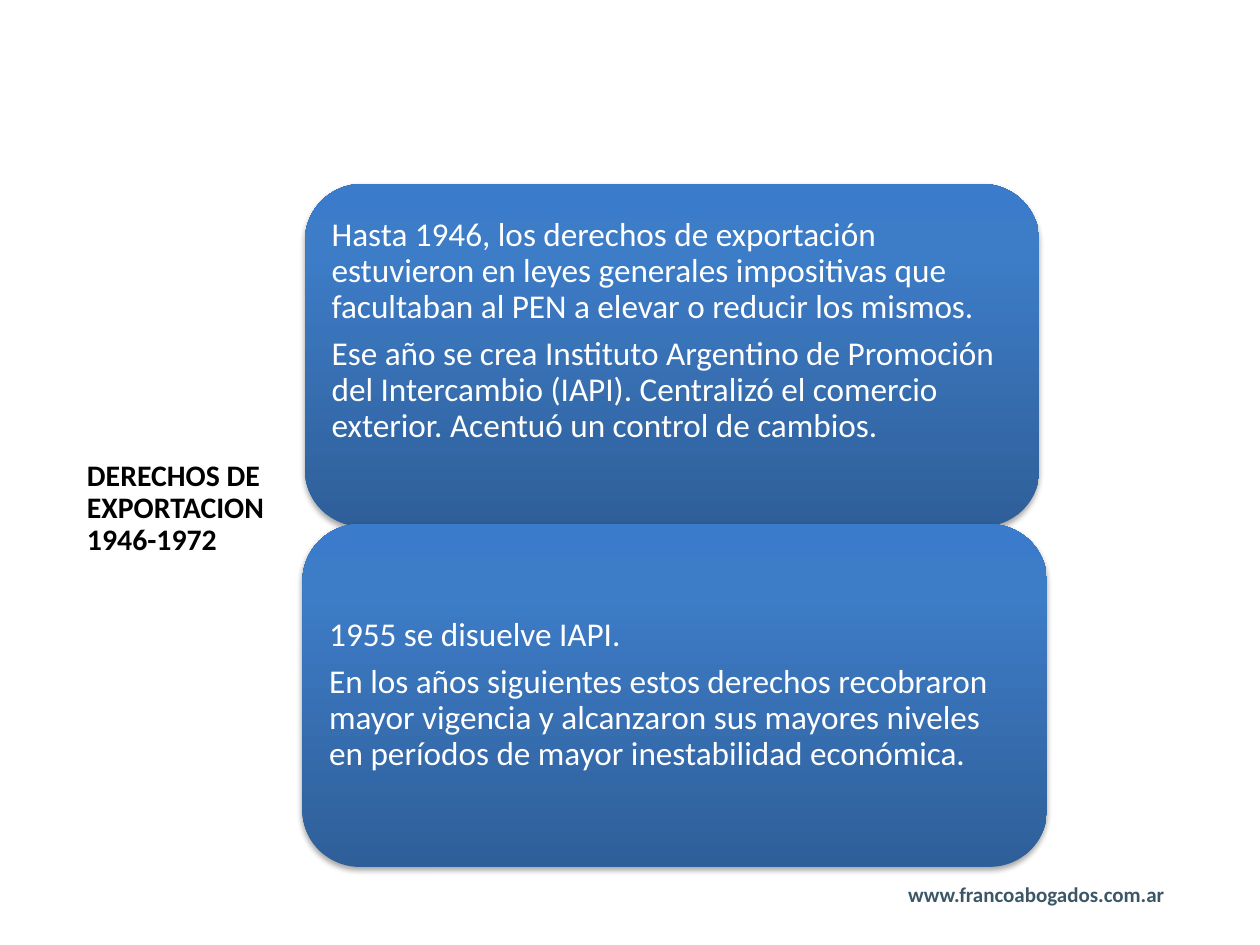
from copy import deepcopy
from dataclasses import dataclass

from lxml.etree import SubElement
from pptx import Presentation
from pptx.dml.color import RGBColor as Rgb
from pptx.enum.shapes import MSO_SHAPE as Shape
from pptx.enum.text import MSO_ANCHOR as Anchor, PP_ALIGN as Align
from pptx.oxml.ns import qn
from pptx.util import Inches, Pt


@dataclass(frozen=True)
class Theme:
    font: str = "Calibri"
    heading: str = "000000"
    website: str = "3B5767"
    panel_text: str = "FFFFFF"
    shadow: str = "000000"
    gradient: tuple = ((0, "2F5F99"), (0.8, "3D7CC7"), (1, "3A7CCB"))
    heading_size: float = 17
    website_size: float = 12
    panel_size: float = 19
    panel_gap: float = 6.5
    line_spacing: float = 0.9


class SlideBuilder:
    def __init__(self, slide, theme):
        self.slide = slide
        self.theme = theme

    def add_run(self, paragraph, text, size, color, bold=False):
        run = paragraph.add_run()
        run.text = text
        run.font.name = self.theme.font
        run.font.size = Pt(size)
        run.font.bold = bold
        run.font.color.rgb = Rgb.from_string(color)

    def website(self, address, left, top, width, height):
        box = self.slide.shapes.add_textbox(
            Inches(left), Inches(top), Inches(width), Inches(height))
        box.text_frame.word_wrap = True
        self.add_run(box.text_frame.paragraphs[0], address,
                     self.theme.website_size, self.theme.website, bold=True)

    def title(self, lines, left, top, width, height):
        heading = self.slide.shapes.title
        heading.left, heading.top = Inches(left), Inches(top)
        heading.width, heading.height = Inches(width), Inches(height)
        frame = heading.text_frame
        frame.word_wrap = True
        frame.vertical_anchor = Anchor.BOTTOM
        paragraph = frame.paragraphs[0]
        paragraph.alignment = Align.LEFT
        paragraph.line_spacing = self.theme.line_spacing
        for index, line in enumerate(lines):
            if index:
                paragraph.add_line_break()
            self.add_run(paragraph, line, self.theme.heading_size,
                         self.theme.heading, bold=True)

    def fill_gradient(self, panel):
        panel.fill.gradient()
        panel.fill.gradient_angle = 90
        stop_list = panel.element.spPr.find(qn("a:gradFill")).find(qn("a:gsLst"))
        stop_list.append(deepcopy(stop_list[-1]))
        for stop, (position, color) in zip(panel.fill.gradient_stops, self.theme.gradient):
            stop.position = position
            stop.color.rgb = Rgb.from_string(color)

    def cast_shadow(self, panel):
        panel.shadow.inherit = False
        effects = panel.element.spPr.find(qn("a:effectLst"))
        shadow = SubElement(effects, qn("a:outerShdw"), blurRad=str(Pt(3.1)),
                            dist=str(Pt(1.8)), dir="5400000", rotWithShape="0")
        color = SubElement(shadow, qn("a:srgbClr"), val=self.theme.shadow)
        SubElement(color, qn("a:alpha"), val="35000")

    def panel(self, statements, left, top, width, height, bottom_inset=0.08):
        panel = self.slide.shapes.add_shape(
            Shape.ROUNDED_RECTANGLE, Inches(left), Inches(top), Inches(width), Inches(height))
        self.fill_gradient(panel)
        panel.line.fill.background()
        self.cast_shadow(panel)
        frame = panel.text_frame
        frame.word_wrap = True
        frame.vertical_anchor = Anchor.MIDDLE
        frame.margin_left = frame.margin_right = frame.margin_top = Inches(0.08)
        frame.margin_bottom = Inches(bottom_inset)
        for index, statement in enumerate(statements):
            paragraph = frame.add_paragraph() if index else frame.paragraphs[0]
            paragraph.alignment = Align.LEFT
            paragraph.line_spacing = self.theme.line_spacing
            paragraph.space_after = Pt(self.theme.panel_gap)
            self.add_run(paragraph, statement, self.theme.panel_size, self.theme.panel_text)


def main():
    deck = Presentation()
    deck.slide_width, deck.slide_height = Inches(10), Inches(7.5)
    builder = SlideBuilder(deck.slides.add_slide(deck.slide_layouts[5]), Theme())

    builder.website("www.francoabogados.com.ar", 7.11, 6.95, 2.38, 0.3)
    builder.title(["DERECHOS DE EXPORTACION", "1946-1972"], 0.59, 3.2, 2.3, 1.27)
    builder.panel([
        "Hasta 1946, los derechos de exportación estuvieron en leyes generales "
        "impositivas que facultaban al PEN a elevar o reducir los mismos.",
        "Ese año se crea Instituto Argentino de Promoción del Intercambio (IAPI). "
        "Centralizó el comercio exterior. Acentuó un control de cambios.",
    ], 2.42, 1.46, 5.83, 2.72, bottom_inset=0.46)
    builder.panel([
        "1955 se disuelve IAPI.",
        "En los años siguientes estos derechos recobraron mayor vigencia y alcanzaron "
        "sus mayores niveles en períodos de mayor inestabilidad económica.",
    ], 2.4, 4.16, 5.91, 2.72)

    deck.save("out.pptx")


if __name__ == "__main__":
    main()
